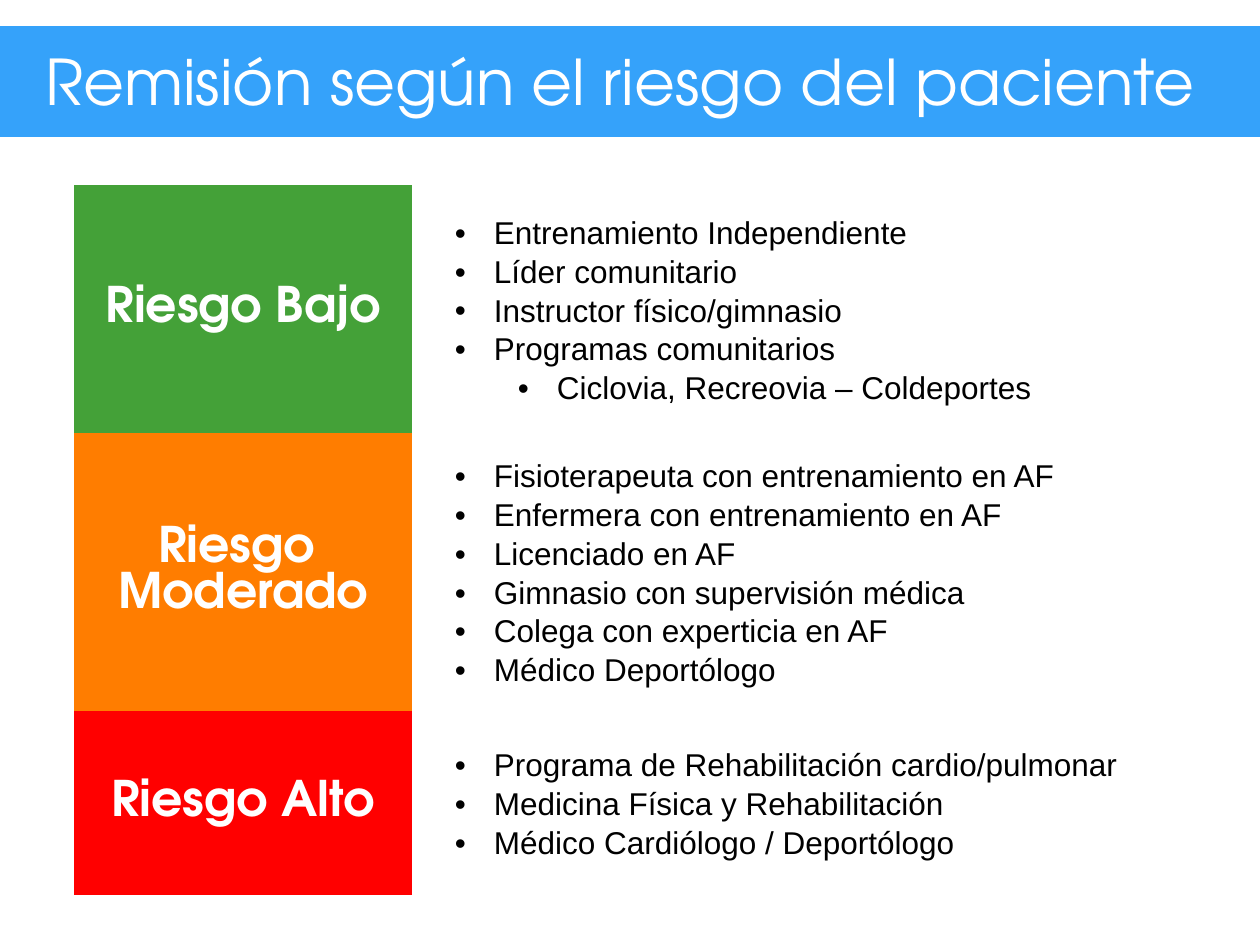
import pptx
import pptx.util
import pptx.dml.color
import pptx.enum.shapes
import pptx.enum.text
import pptx.oxml.ns
import lxml.etree

Inches = pptx.util.Inches
NO_STYLE_NO_GRID = "{2D5ABB26-0587-4C30-8999-92F81FD0307C}"


def color(hex_value):
    return pptx.dml.color.RGBColor.from_string(hex_value)


def write(paragraph, text, font_format, font_color):
    run = paragraph.add_run()
    run.text = text
    for name, value in font_format.items():
        setattr(run.font, name, value)
    run.font.color.rgb = color(font_color)


title_format = {"name": "TeX Gyre Adventor", "size": pptx.util.Pt(36)}
risk_format = {"name": "TeX Gyre Adventor", "size": pptx.util.Pt(28), "bold": True}
referral_format = {"name": "Arial", "size": pptx.util.Pt(18), "bold": False}

# Each level: row height, fill, label lines, referrals as (indent level, text)
risk_levels = [
    (1.97, "44A138", ["Riesgo Bajo"], [
        (0, "Entrenamiento Independiente"),
        (0, "Líder comunitario"),
        (0, "Instructor físico/gimnasio"),
        (0, "Programas comunitarios"),
        (1, "Ciclovia, Recreovia – Coldeportes"),
    ]),
    (2.2, "FF7D00", ["Riesgo ", "Moderado"], [
        (0, "Fisioterapeuta con entrenamiento en AF"),
        (0, "Enfermera con entrenamiento en AF"),
        (0, "Licenciado en AF"),
        (0, "Gimnasio con supervisión médica"),
        (0, "Colega con experticia en AF"),
        (0, "Médico Deportólogo"),
    ]),
    (1.46, "FF0000", ["Riesgo Alto"], [
        (0, "Programa de Rehabilitación cardio/pulmonar"),
        (0, "Medicina Física y Rehabilitación"),
        (0, "Médico Cardiólogo / Deportólogo"),
    ]),
]
column_widths = [2.68, 0.24, 5.83]

presentation = pptx.Presentation()
presentation.slide_width = Inches(10)
presentation.slide_height = Inches(7.5)
slide = presentation.slides.add_slide(presentation.slide_layouts[6])

# Title band
band = slide.shapes.add_shape(
    pptx.enum.shapes.MSO_SHAPE.RECTANGLE, 0, Inches(0.21), Inches(10), Inches(0.87))
band.shadow.inherit = False
band.fill.solid()
band.fill.fore_color.rgb = color("35A2FA")
band.line.color.rgb = color("35A2FA")
band.line.width = pptx.util.Pt(0.75)

# Title
title = slide.shapes.add_textbox(Inches(0.26), Inches(0.29), Inches(9.43), Inches(0.71))
title.text_frame.word_wrap = False
title.text_frame.auto_size = pptx.enum.text.MSO_AUTO_SIZE.SHAPE_TO_FIT_TEXT
write(title.text_frame.paragraphs[0], "Remisión según el riesgo del paciente",
      title_format, "FFFFFF")

# Table without style, banding or grid
total_height = sum(level[0] for level in risk_levels)
risk_table = slide.shapes.add_table(
    len(risk_levels), len(column_widths), Inches(0.59), Inches(1.47),
    Inches(sum(column_widths)), Inches(total_height)).table
risk_table.first_row = False
risk_table.horz_banding = False
style_id = risk_table._tbl.tblPr.find(pptx.oxml.ns.qn("a:tableStyleId"))
style_id.text = NO_STYLE_NO_GRID
for column, width in zip(risk_table.columns, column_widths):
    column.width = Inches(width)

for row, (height, fill, label, referrals) in zip(risk_table.rows, risk_levels):
    row.height = Inches(height)
    label_cell, gap_cell, referral_cell = row.cells
    for cell in row.cells:
        cell.vertical_anchor = pptx.enum.text.MSO_ANCHOR.MIDDLE
        cell.fill.background()

    # Risk label
    label_cell.fill.solid()
    label_cell.fill.fore_color.rgb = color(fill)
    for index, line in enumerate(label):
        frame = label_cell.text_frame
        paragraph = frame.add_paragraph() if index else frame.paragraphs[0]
        paragraph.alignment = pptx.enum.text.PP_ALIGN.CENTER
        write(paragraph, line, risk_format, "FFFFFF")

    # Bulleted referrals
    for index, (level, text) in enumerate(referrals):
        frame = referral_cell.text_frame
        paragraph = frame.add_paragraph() if index else frame.paragraphs[0]
        paragraph.level = level
        paragraph.line_spacing = 1.1
        properties = paragraph._p.get_or_add_pPr()
        properties.set("marL", str(Inches(0.31 + 0.5 * level)))
        properties.set("indent", str(Inches(-0.31)))
        for tag, key, value in [("a:buFont", "typeface", "Arial"), ("a:buChar", "char", "•")]:
            lxml.etree.SubElement(properties, pptx.oxml.ns.qn(tag)).set(key, value)
        write(paragraph, text, referral_format, "000000")

presentation.save("out.pptx")
